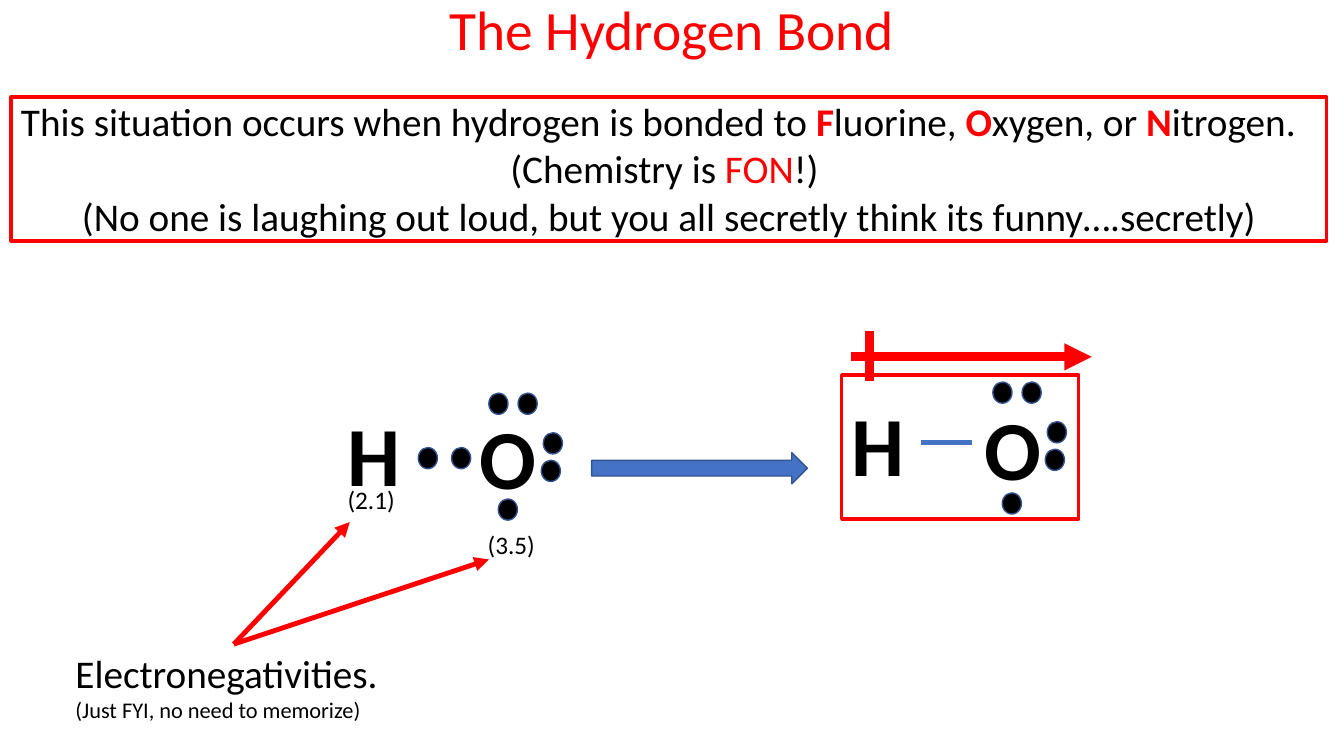
import pptx
import pptx.dml.color
import pptx.enum.shapes
import pptx.enum.text
import pptx.oxml.ns
import pptx.util
from lxml import etree

SHAPES = pptx.enum.shapes.MSO_SHAPE
ALIGN = pptx.enum.text.PP_ALIGN
ANCHOR = pptx.enum.text.MSO_ANCHOR

COLORS = {"red": "FF0000", "black": "000000", "blue": "4472C4", "outline": "325491"}
FONT = "Calibri"

# The slide is a grid of 40 columns by 22.5 rows of square cells.
COLUMNS, ROWS = 40, 22.5
CELL = pptx.util.Inches(13.33) / COLUMNS

# A paragraph is a list of runs: (text, color, bold).
TITLE = [[("The Hydrogen Bond", "red", False)]]
STATEMENT = [
    [
        ("This situation occurs when hydrogen is bonded to ", "black", False),
        ("F", "red", True), ("luorine, ", "black", False),
        ("O", "red", True), ("xygen, or ", "black", False),
        ("N", "red", True), ("itrogen.", "black", False),
    ],
    [("(Chemistry is ", "black", False), ("FON", "red", False), ("!) ", "black", False)],
    [("(No one is laughing out loud, but you all secretly think its funny….secretly)",
      "black", False)],
]
NOTE = [
    [("Electronegativities.", "black", False)],
    [("(Just FYI, no need to memorize)", "black", False)],
]

ATOM_SIZE = (2.91, 3.33)
ATOMS = [("H", 10.05, 11.82), ("O", 13.98, 11.91), ("H", 25.05, 11.52), ("O", 29.01, 11.64)]
VALUE_SIZE = (2.04, 1.2)
VALUES = [("(2.1)", 10.05, 14.28), ("(3.5)", 14.22, 15.6)]

DOT_SIZE = (0.57, 0.63)
BONDING_DOTS = [(12.45, 13.32), (13.44, 13.32)]
LONE_PAIRS = [(0, 0), (0.87, 0), (1.62, 1.18), (1.56, 2)]
SINGLE_DOT_COLUMN = 0.28
# First dot of each oxygen, and how far below it the single dot sits.
OXYGENS = [(14.55, 11.7, 3.15), (29.55, 11.37, 3.3)]

FRAMES = [(0.33, 2.88, 39.15, 4.29), (25.05, 11.16, 7.05, 4.29)]
REACTION_ARROW = (17.61, 13.47, 6.42, 0.93)
POINTER_START = (6.96, 19.17)
# start, end, color, width in points, arrowhead
LINES = [
    (POINTER_START, (10.41, 15.54), "red", 3.5, True),
    (POINTER_START, (14.55, 16.65), "red", 3.5, True),
    ((27.42, 13.17), (28.92, 13.17), "blue", 3.5, False),
    ((25.32, 10.62), (32.49, 10.62), "red", 6.5, True),
    ((25.89, 11.34), (25.89, 9.84), "red", 6.5, False),
]


def cells(*lengths):
    return [round(length * CELL) for length in lengths]


def rgb(name):
    return pptx.dml.color.RGBColor.from_string(COLORS[name])


def add_text(slide, paragraphs, box, sizes, aligns=(ALIGN.LEFT,),
             anchor=ANCHOR.TOP, spacing=1.0):
    """Add a text box; the last size and alignment serve all later paragraphs."""
    frame = slide.shapes.add_textbox(*cells(*box)).text_frame
    frame.word_wrap = True
    frame.vertical_anchor = anchor
    for index, runs in enumerate(paragraphs):
        paragraph = frame.add_paragraph() if index else frame.paragraphs[0]
        paragraph.alignment = aligns[min(index, len(aligns) - 1)]
        paragraph.line_spacing = spacing
        for text, color, bold in runs:
            run = paragraph.add_run()
            run.text = text
            run.font.name = FONT
            run.font.size = pptx.util.Pt(sizes[min(index, len(sizes) - 1)])
            run.font.bold = bold
            run.font.color.rgb = rgb(color)


def add_shape(slide, kind, box, fill=None, line="outline", width=1):
    shape = slide.shapes.add_shape(kind, *cells(*box))
    shape.shadow.inherit = False
    if fill:
        shape.fill.solid()
        shape.fill.fore_color.rgb = rgb(fill)
    else:
        shape.fill.background()
    shape.line.color.rgb = rgb(line)
    shape.line.width = pptx.util.Pt(width)


def add_line(slide, start, end, color, width, arrowhead):
    connector = slide.shapes.add_connector(
        pptx.enum.shapes.MSO_CONNECTOR.STRAIGHT, *cells(*start, *end))
    connector.line.color.rgb = rgb(color)
    connector.line.width = pptx.util.Pt(width)
    qualified = pptx.oxml.ns.qn
    properties = connector.element.spPr
    if arrowhead:
        outline = properties.find(qualified("a:ln"))
        etree.SubElement(outline, qualified("a:tailEnd"), type="triangle")
    etree.SubElement(properties, qualified("a:effectLst"))


def main():
    presentation = pptx.Presentation()
    presentation.slide_width, presentation.slide_height = cells(COLUMNS, ROWS)
    slide = presentation.slides.add_slide(presentation.slide_layouts[6])

    add_text(slide, TITLE, (0, 0, COLUMNS, 1.92), [39.6], [ALIGN.CENTER],
             anchor=ANCHOR.MIDDLE, spacing=0.9)
    add_text(slide, STATEMENT, (0.33, 2.76, 39.15, 4.53), [28],
             [ALIGN.LEFT, ALIGN.CENTER])
    add_text(slide, NOTE, (1.95, 19.17, 10.05, 2.52), [28, 16])
    for labels, size, points, bold in [(ATOMS, ATOM_SIZE, 60, True),
                                       (VALUES, VALUE_SIZE, 18, False)]:
        for text, left, top in labels:
            add_text(slide, [[(text, "black", bold)]], (left, top, *size), [points])

    dots = list(BONDING_DOTS)
    for left, top, drop in OXYGENS:
        offsets = LONE_PAIRS + [(SINGLE_DOT_COLUMN, drop)]
        dots += [(left + across, top + down) for across, down in offsets]
    for dot in dots:
        add_shape(slide, SHAPES.OVAL, (*dot, *DOT_SIZE), fill="black")

    add_shape(slide, SHAPES.RIGHT_ARROW, REACTION_ARROW, fill="blue")
    for line in LINES:
        add_line(slide, *line)
    for frame in FRAMES:
        add_shape(slide, SHAPES.RECTANGLE, frame, line="red", width=2.5)

    presentation.save("out.pptx")


if __name__ == "__main__":
    main()
